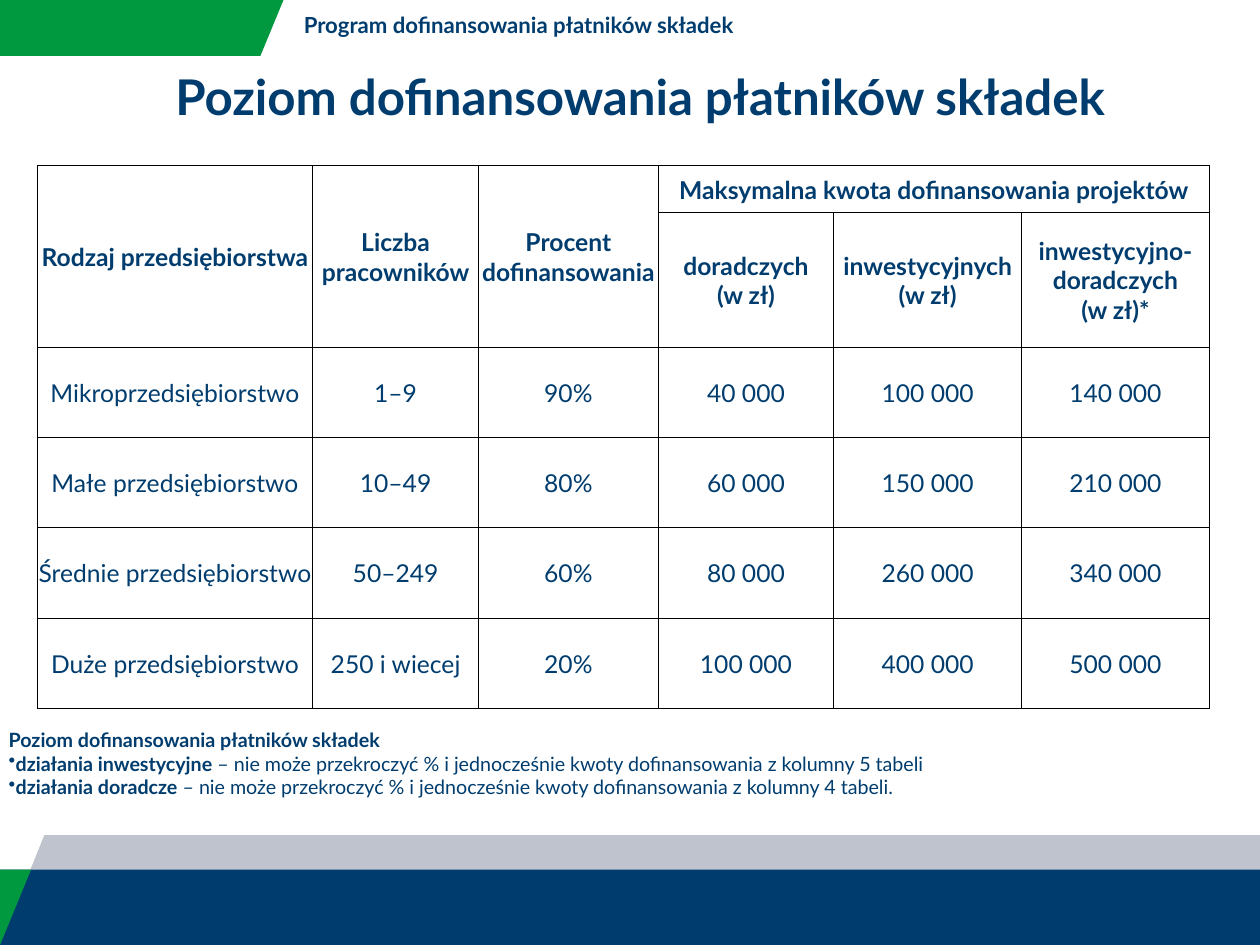
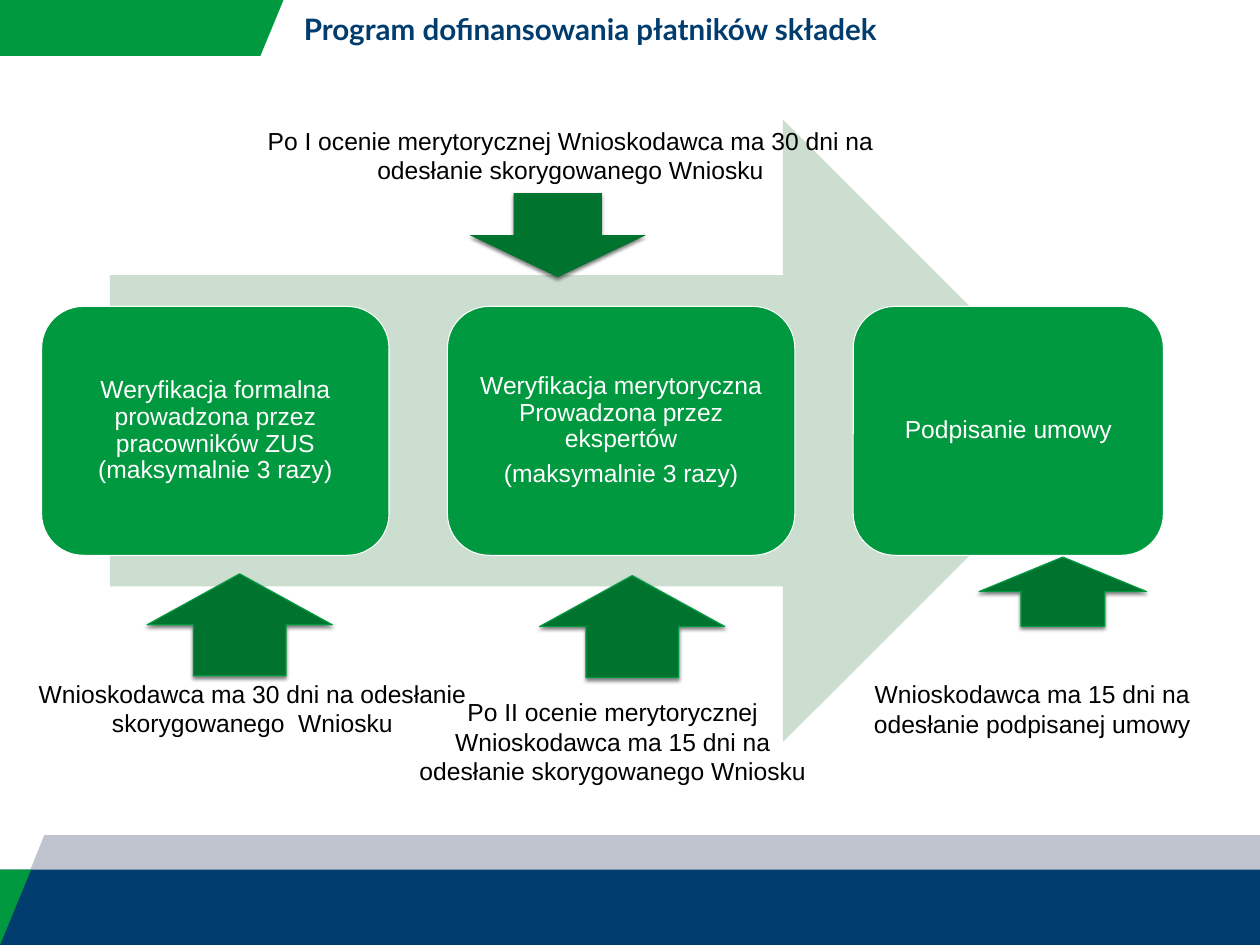
from dataclasses import dataclass

from lxml.etree import SubElement
from pptx import Presentation
from pptx.dml.color import RGBColor as RGB
from pptx.enum.shapes import MSO_SHAPE as Geo
from pptx.enum.text import MSO_ANCHOR as Anchor, PP_ALIGN as Align
from pptx.oxml import parse_xml
from pptx.oxml.ns import nsdecls, qn
from pptx.util import Emu, Inches, Pt


@dataclass(frozen=True)
class Theme:
    """Colours, fonts and type sizes."""
    navy: str = "003D6E"
    green: str = "00993F"
    dark: str = "00732F"
    pale: str = "CCDECF"
    gray: str = "BEC3CE"
    white: str = "FFFFFF"
    black: str = "000000"
    head: str = "Lato"
    body: str = "Arial"
    title: int = 40
    large: int = 24
    text: int = 20
    small: int = 18
    note: int = 16


WIDE, HIGH = 14.22, 10.67
PROGRAM = "Program dofinansowania płatników składek"
LEVEL = "Poziom dofinansowania płatników składek"


class Deck:
    """Holds the style and the current slide."""

    def __init__(self, theme):
        self.theme = theme
        self.show = Presentation()
        self.show.slide_width = Inches(WIDE)
        self.show.slide_height = Inches(HIGH)
        self.slide = None

    def page(self, size):
        """Start a slide with its bands and header."""
        t = self.theme
        self.slide = self.show.slides.add_slide(self.show.slide_layouts[6])
        self.band([(0, 0), (3.2, 0), (2.94, 0.63), (0, 0.63)], t.green)
        self.band([(0, HIGH), (0.5, 9.43), (WIDE, 9.43), (WIDE, HIGH)], t.gray)
        self.shape(Geo.RECTANGLE, (0, 9.82, WIDE, HIGH - 9.82), t.navy)
        self.band([(0, 9.82), (0.35, 9.82), (0, HIGH)], t.green)
        frame = self.box((3.33, 0.08, 10.08, 0.42))
        self.lines(frame, [PROGRAM], size, t.navy, t.head, bold=True)

    def paint(self, shape, fill, line=None, width=1):
        """Set fill and line, and drop the theme shadow."""
        shape.shadow.inherit = False
        shape.fill.solid()
        shape.fill.fore_color.rgb = RGB.from_string(fill)
        if line:
            shape.line.color.rgb = RGB.from_string(line)
            shape.line.width = Pt(width)
        else:
            shape.line.fill.background()
        return shape

    def band(self, points, fill):
        """Draw a filled polygon."""
        spots = [(Inches(x), Inches(y)) for x, y in points]
        form = self.slide.shapes.build_freeform(*spots[0], scale=1.0)
        form.add_line_segments(spots[1:], close=True)
        self.paint(form.convert_to_shape(), fill)

    def shape(self, geo, area, fill, line=None, width=1):
        """Draw a preset shape."""
        item = self.slide.shapes.add_shape(geo, *map(Inches, area))
        return self.paint(item, fill, line, width)

    def arrow(self, geo, area, line=None):
        """Draw a small block arrow with a soft shadow."""
        t = self.theme
        item = self.shape(geo, area, t.dark, line)
        glow = SubElement(item._element.spPr.find(qn("a:effectLst")), qn("a:outerShdw"),
                          blurRad=str(Pt(3)), dist=str(Pt(2)), dir="5400000", rotWithShape="0")
        tint = SubElement(glow, qn("a:srgbClr"), val=t.black)
        SubElement(tint, qn("a:alpha"), val="50000")

    def inset(self, frame, gap):
        """Give all four margins one value."""
        frame.margin_left = frame.margin_right = Inches(gap)
        frame.margin_top = frame.margin_bottom = Inches(gap)

    def box(self, area, gap=None):
        """Add a wrapping text box and return its frame."""
        frame = self.slide.shapes.add_textbox(*map(Inches, area)).text_frame
        frame.word_wrap = True
        if gap is not None:
            self.inset(frame, gap)
        return frame

    def font(self, para, size, color, face, bold=False):
        """Style a whole paragraph."""
        para.font.size = Pt(size)
        para.font.name = face
        para.font.bold = bold
        para.font.color.rgb = RGB.from_string(color)

    def lines(self, frame, texts, size, color, face, bold=False, align=Align.LEFT):
        """Fill a frame with one paragraph per text."""
        for i, text in enumerate(texts):
            para = frame.add_paragraph() if i else frame.paragraphs[0]
            para.text = text
            para.alignment = align
            self.font(para, size, color, face, bold)

    def title(self, text):
        """Add the large centred title."""
        t = self.theme
        frame = self.box((0.65, 0.69, 13.15, 0.79), 0.06)
        frame.vertical_anchor = Anchor.MIDDLE
        self.lines(frame, [text], t.title, t.navy, t.head, True, Align.CENTER)

    def label(self, area, texts):
        """Add a centred caption."""
        t = self.theme
        self.lines(self.box(area, 0.06), texts, t.text, t.black, t.body, align=Align.CENTER)

    def step(self, area, texts):
        """Add a rounded process step."""
        t = self.theme
        frame = self.shape(Geo.ROUNDED_RECTANGLE, area, t.green, t.white, 0.85).text_frame
        frame.word_wrap = True
        frame.vertical_anchor = Anchor.MIDDLE
        self.inset(frame, 0.08)
        self.lines(frame, texts, t.text, t.white, t.body, align=Align.CENTER)
        for para in frame.paragraphs:
            para.line_spacing = 0.9
            para.space_after = Pt(7)

    def notes(self, area, head, items):
        """Add a bold heading with bulleted remarks."""
        t = self.theme
        frame = self.box(area)
        self.lines(frame, [head], t.note, t.navy, t.head, True)
        for key, rest in items:
            para = frame.add_paragraph()
            props = para._p.get_or_add_pPr()
            props.set("marL", "0")
            props.set("indent", "0")
            SubElement(props, qn("a:buChar"), char="•")
            self.font(para, t.note, t.navy, t.head)
            for text, bold in ((key, True), (rest, False)):
                run = para.add_run()
                run.text = text
                run.font.bold = bold

    def cell(self, cell, text, bold):
        """Style and fill one table cell."""
        t = self.theme
        cell.fill.background()
        cell.vertical_anchor = Anchor.MIDDLE
        cell.margin_left = cell.margin_right = cell.margin_top = Inches(0.01)
        cell.margin_bottom = Emu(0)
        para = cell.text_frame.paragraphs[0]
        para.text = text
        para.alignment = Align.CENTER
        self.font(para, t.text, t.navy, t.head, bold)
        props = cell._tc.get_or_add_tcPr()
        for i, side in enumerate("LRTB"):
            props.insert(i, parse_xml(
                f'<a:ln{side} {nsdecls("a")} w="{Pt(0.5)}"><a:solidFill>'
                f'<a:srgbClr val="{t.black}"/></a:solidFill></a:ln{side}>'))

    def table(self, spot, cols, rows, data, spans, heads):
        """Add a ruled table with merged heading cells."""
        area = (*spot, sum(cols), sum(rows))
        grid = self.slide.shapes.add_table(len(rows), len(cols), *map(Inches, area)).table
        grid.first_row = grid.horz_banding = False
        for col, wide in zip(grid.columns, cols):
            col.width = Inches(wide)
        for row, high in zip(grid.rows, rows):
            row.height = Inches(high)
        for r, line in enumerate(data):
            for c, text in enumerate(line):
                self.cell(grid.cell(r, c), text, r < heads)
        for start, end in spans:
            grid.cell(*start).merge(grid.cell(*end))


def levels(deck):
    """Build the slide with the funding table."""
    deck.page(deck.theme.small)
    deck.notes((0, 8.17, 13.88, 1.18), LEVEL, [
        ("działania inwestycyjne",
         " – nie może przekroczyć % i jednocześnie kwoty dofinansowania z kolumny 5 tabeli"),
        ("działania doradcze",
         " – nie może przekroczyć % i jednocześnie kwoty dofinansowania z kolumny 4 tabeli."),
    ])
    deck.title(LEVEL)
    data = [
        ["Rodzaj przedsiębiorstwa", "Liczba pracowników", "Procent dofinansowania",
         "Maksymalna kwota dofinansowania projektów", "", ""],
        ["", "", "", "doradczych\n(w zł)", "inwestycyjnych\n(w zł)",
         "inwestycyjno-doradczych\n(w zł)*"],
        ["Mikroprzedsiębiorstwo", "1–9", "90%", "40 000", "100 000", "140 000"],
        ["Małe przedsiębiorstwo", "10–49", "80%", "60 000", "150 000", "210 000"],
        ["Średnie przedsiębiorstwo", "50–249", "60%", "80 000", "260 000", "340 000"],
        ["Duże przedsiębiorstwo", "250 i wiecej", "20%", "100 000", "400 000", "500 000"],
    ]
    spans = [((0, c), (1, c)) for c in range(3)] + [((0, 3), (0, 5))]
    deck.table((0.42, 1.87), [3.11, 1.87, 2.03, 1.98, 2.12, 2.12],
               [0.53, 1.52] + [1.02] * 4, data, spans, 2)


def process(deck):
    """Build the slide with the review process."""
    t = deck.theme
    deck.page(t.large)
    deck.shape(Geo.RIGHT_ARROW, (1.24, 1.35, 11.11, 7.03), t.pale)
    steps = [
        (3.92, ["Weryfikacja formalna prowadzona przez pracowników ZUS (maksymalnie 3 razy)"]),
        (3.92, ["Weryfikacja merytoryczna Prowadzona przez ekspertów", "(maksymalnie 3 razy)"]),
        (3.5, ["Podpisanie umowy"]),
    ]
    for i, (wide, texts) in enumerate(steps):
        deck.step((0.47 + 4.58 * i, 3.46, wide, 2.81), texts)
    for area in ((1.66, 6.48, 2.09, 1.15), (6.09, 6.5, 2.09, 1.15), (11.05, 6.29, 1.89, 0.78)):
        deck.arrow(Geo.UP_ARROW, area, t.green)
    deck.arrow(Geo.DOWN_ARROW, (5.3, 2.18, 1.99, 0.95))
    deck.label((0, 7.6, 5.7, 0.79),
               ["Wnioskodawca ma 30 dni na odesłanie", "skorygowanego  Wniosku"])
    deck.label((9.08, 7.61, 5.14, 0.79),
               ["Wnioskodawca ma 15 dni na", "odesłanie podpisanej umowy"])
    deck.label((4.12, 7.81, 5.59, 1.12),
               ["Po II ocenie merytorycznej", "Wnioskodawca ma 15 dni na",
                "odesłanie skorygowanego Wniosku"])
    deck.label((2.86, 1.36, 7.16, 0.79),
               ["Po I ocenie merytorycznej Wnioskodawca ma 30 dni na",
                "odesłanie skorygowanego Wniosku"])


def main():
    """Build and save the deck."""
    deck = Deck(Theme())
    levels(deck)
    process(deck)
    deck.show.save("out.pptx")


if __name__ == "__main__":
    main()
